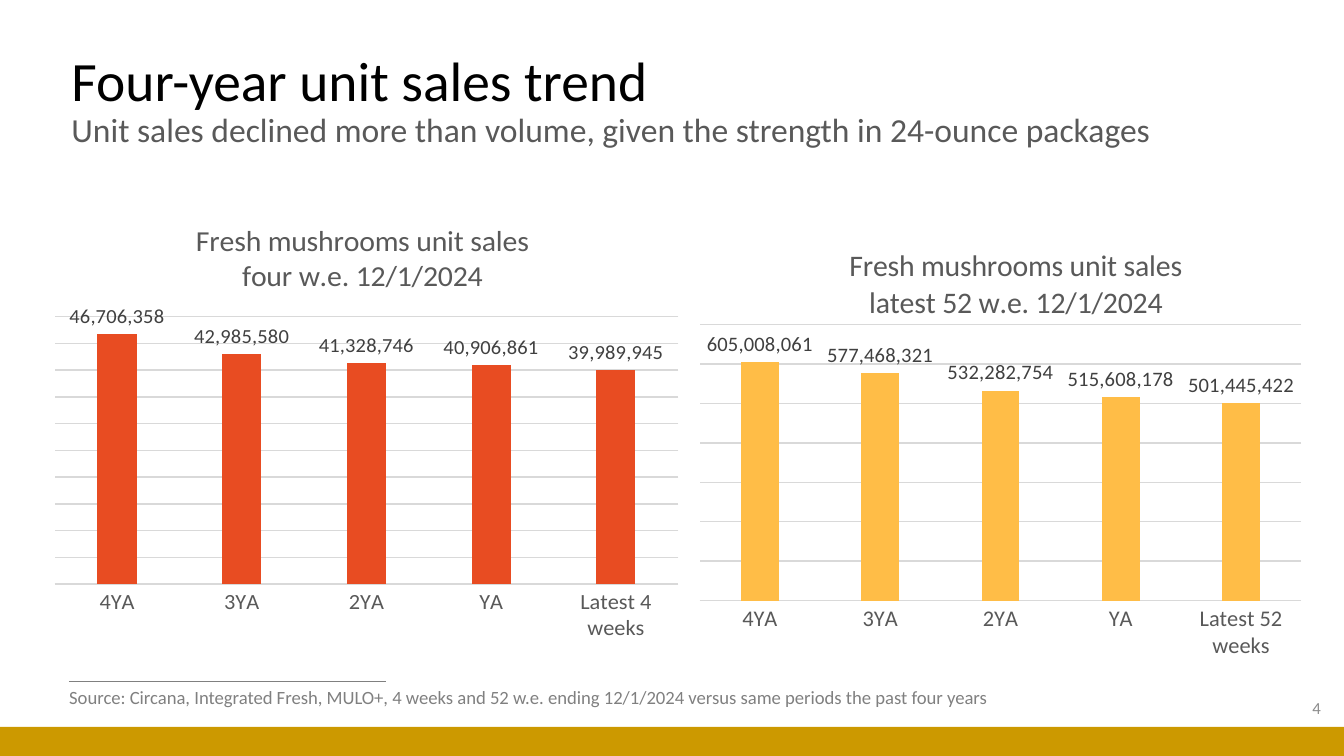
from lxml import etree
from pptx import Presentation
from pptx.chart.data import CategoryChartData
from pptx.dml.color import RGBColor
from pptx.enum.chart import XL_CHART_TYPE, XL_LABEL_POSITION, XL_TICK_MARK
from pptx.enum.shapes import MSO_CONNECTOR, MSO_SHAPE
from pptx.enum.text import MSO_ANCHOR, MSO_AUTO_SIZE, PP_ALIGN
from pptx.oxml.ns import qn
from pptx.util import Emu, Pt

COLUMN = XL_CHART_TYPE.COLUMN_CLUSTERED
OUTSIDE_END = XL_LABEL_POSITION.OUTSIDE_END
NO_TICK = XL_TICK_MARK.NONE
STRAIGHT = MSO_CONNECTOR.STRAIGHT
RECTANGLE = MSO_SHAPE.RECTANGLE
MIDDLE, TOP = MSO_ANCHOR.MIDDLE, MSO_ANCHOR.TOP
LEFT, RIGHT = PP_ALIGN.LEFT, PP_ALIGN.RIGHT
NO_FIT = MSO_AUTO_SIZE.NONE

PX_PER_INCH = 134.4
FONT = "Calibri"
NUMBER_FORMAT = "#,##0"
COLORS = {
    "black": "000000", "subtitle": "595959", "label": "404040",
    "source": "808080", "number": "8C8C8C", "grid": "D9D9D9",
    "band": "CC9900", "four_weeks": "E84C22", "year": "FFBD47",
}
YEARS_AGO = ["4YA", "3YA", "2YA", "YA"]
CHARTS = [
    dict(box=(54, 196, 625, 445), color="four_weeks", latest="Latest 4 weeks",
         title=["Fresh mushrooms unit sales", "four w.e. 12/1/2024"],
         values=[46706358, 42985580, 41328746, 40906861, 39989945],
         top=50_000_000, step=5_000_000,
         title_at=(0.22, 0.05), plot=(0, 0.28, 1, 0.62)),
    dict(box=(699, 219, 634, 460), color="year", latest="Latest 52 weeks",
         title=["Fresh mushrooms unit sales", "latest 52 w.e. 12/1/2024"],
         values=[605008061, 577468321, 532282754, 515608178, 501445422],
         top=700_000_000, step=100_000_000,
         title_at=(0.23, 0.05), plot=(0, 0.23, 0.95, 0.6)),
]


def px(*lengths):
    """Turn pixel lengths into EMU."""
    return [Emu(round(n * 914400 / PX_PER_INCH)) for n in lengths]


def rgb(name):
    """Look up a named colour."""
    return RGBColor.from_string(COLORS[name])


def set_font(font, size, color):
    """Apply the slide typeface with a size and colour."""
    font.name, font.size, font.bold = FONT, Pt(size), False
    font.color.rgb = rgb(color)


def set_layout(parent, index, **fractions):
    """Give a chart part a manual layout in fractions of the chart."""
    for old in parent.findall(qn("c:layout")):
        parent.remove(old)
    layout = etree.Element(qn("c:layout"))
    manual = etree.SubElement(layout, qn("c:manualLayout"))
    if "w" in fractions:
        etree.SubElement(manual, qn("c:layoutTarget"), val="inner")
    for mode in ("xMode", "yMode"):
        etree.SubElement(manual, qn(f"c:{mode}"), val="edge")
    for key, value in fractions.items():
        etree.SubElement(manual, qn(f"c:{key}"), val=str(value))
    parent.insert(index, layout)


def add_band(slide):
    """Draw the coloured band along the bottom edge."""
    sp = slide.shapes.add_shape(RECTANGLE, *px(0, 727, 1344, 29))
    sp.shadow.inherit = False
    sp.fill.solid()
    sp.fill.fore_color.rgb = rgb("band")
    sp.line.fill.background()


def add_rule(slide):
    """Draw the thin rule above the source line."""
    line = slide.shapes.add_connector(STRAIGHT, *px(69, 682, 386, 682))
    line.line.color.rgb = rgb("source")
    line.line.width = Pt(0.5)
    etree.SubElement(line._element.spPr, qn("a:effectLst"))


def set_title(slide, title, subtitle):
    """Place the title with its subtitle on a second line."""
    sp = slide.shapes.title
    sp.left, sp.top, sp.width, sp.height = px(58, 48, 1218, 107)
    tf = sp.text_frame
    tf.auto_size, tf.vertical_anchor = NO_FIT, MIDDLE
    p = tf.paragraphs[0]
    p.alignment, p.line_spacing = LEFT, 0.9
    r = p.add_run()
    r.text = title
    set_font(r.font, 29.7, "black")
    p.add_line_break()
    r = p.add_run()
    r.text = subtitle
    set_font(r.font, 18, "subtitle")


def add_text(slide, box, text, size, color, align=LEFT, anchor=TOP, wrap=True):
    """Add a one-paragraph text box."""
    tf = slide.shapes.add_textbox(*px(*box)).text_frame
    tf.word_wrap, tf.vertical_anchor = wrap, anchor
    p = tf.paragraphs[0]
    p.text, p.alignment = text, align
    set_font(p.font, size, color)


def set_chart_title(chart, lines, x, y):
    """Write the chart title, one paragraph per line."""
    chart.has_title = True
    title = chart.chart_title
    tf = title.text_frame
    for i, text in enumerate(lines):
        p = tf.add_paragraph() if i else tf.paragraphs[0]
        p.text = text
        set_font(p.font, 16, "subtitle")
    title.include_in_layout = False
    set_layout(title._element, 1, x=x, y=y)


def style_axes(chart, top, step):
    """Show the category axis and gridlines, hide the value axis."""
    cat, val = chart.category_axis, chart.value_axis
    cat.major_tick_mark = cat.minor_tick_mark = NO_TICK
    set_font(cat.tick_labels.font, 12, "subtitle")
    val.visible = False
    val.minimum_scale, val.maximum_scale, val.major_unit = 0, top, step
    val.tick_labels.number_format = NUMBER_FORMAT
    val.tick_labels.number_format_is_linked = False
    for line in (cat.format.line, val.major_gridlines.format.line):
        line.color.rgb = rgb("grid")
        line.width = Pt(0.75)


def add_sales_chart(slide, box, color, latest, title, values, top, step, title_at, plot):
    """Add a column chart of unit sales."""
    data = CategoryChartData(number_format=NUMBER_FORMAT)
    data.categories = YEARS_AGO + [latest]
    data.add_series("Series 1", values)
    chart = slide.shapes.add_chart(COLUMN, *px(*box), data).chart
    chart.has_legend = False
    set_font(chart.font, 10, "black")
    set_chart_title(chart, title, *title_at)
    style_axes(chart, top, step)
    columns = chart.plots[0]
    columns.vary_by_categories = False
    columns.gap_width, columns.overlap = 219, -27
    fill = columns.series[0].format.fill
    fill.solid()
    fill.fore_color.rgb = rgb(color)
    labels = columns.series[0].data_labels
    labels.show_value, labels.position = True, OUTSIDE_END
    labels.number_format, labels.number_format_is_linked = NUMBER_FORMAT, False
    set_font(labels.font, 11, "label")
    set_layout(chart._chartSpace.chart.plotArea, 0, **dict(zip("xywh", plot)))


def main():
    """Build the slide and save it."""
    prs = Presentation()
    prs.slide_width, prs.slide_height = px(1344, 756)
    slide = prs.slides.add_slide(prs.slide_layouts[5])
    add_rule(slide)
    add_band(slide)
    set_title(slide, "Four-year unit sales trend",
              "Unit sales declined more than volume, given the strength in 24-ounce packages")
    add_text(slide, (1032, 688, 302, 40), "4", 9, "number", RIGHT, MIDDLE)
    add_text(slide, (56, 679, 954, 36),
             "Source: Circana, Integrated Fresh, MULO+, 4 weeks and 52 w.e. ending "
             "12/1/2024 versus same periods the past four years",
             10, "source", wrap=False)
    for chart in CHARTS:
        add_sales_chart(slide, **chart)
    prs.save("out.pptx")


if __name__ == "__main__":
    main()
